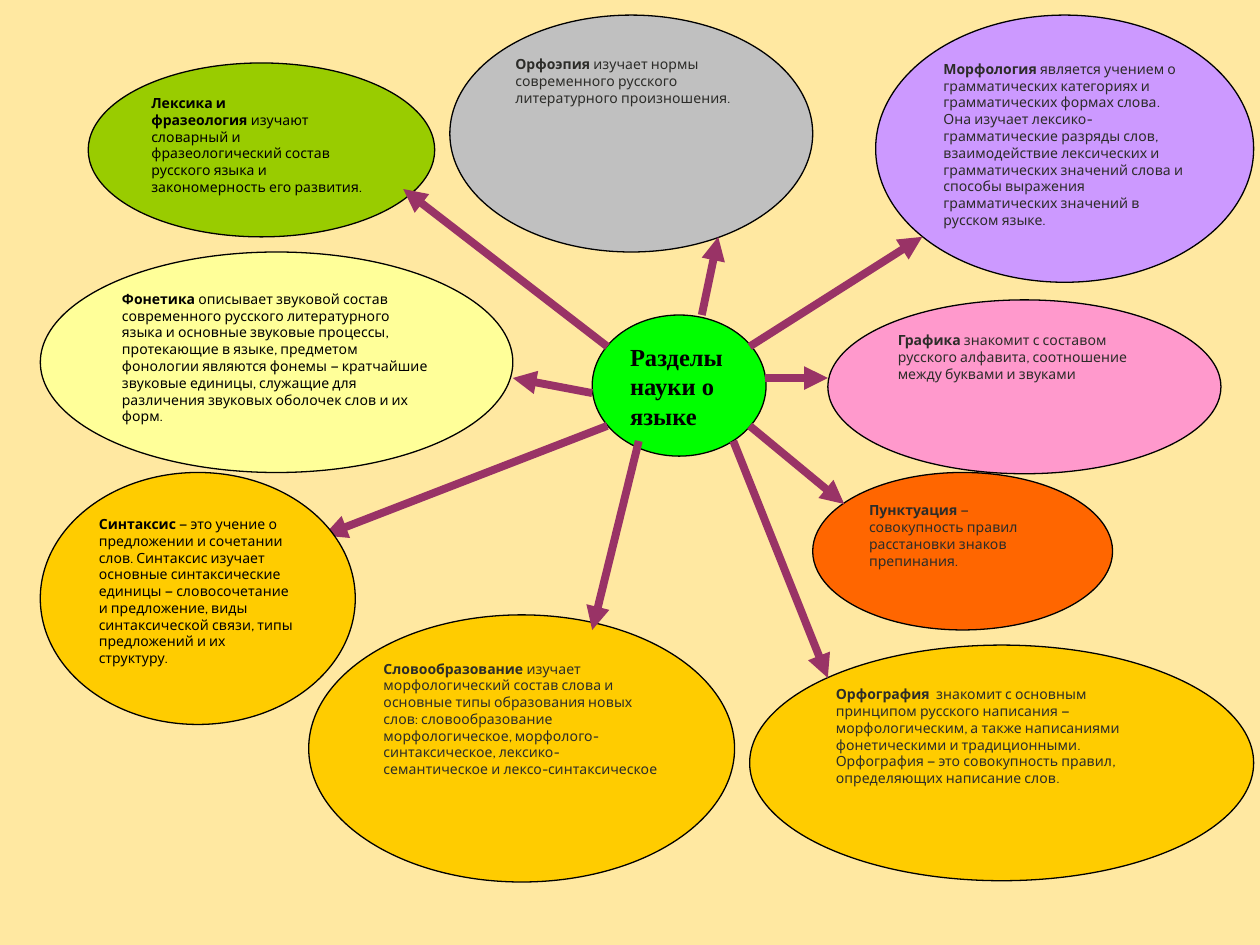
import pptx
import pptx.util
import pptx.dml.color
import pptx.enum.shapes
import pptx.enum.text
import pptx.oxml.ns
import lxml.etree

Inches = pptx.util.Inches
Pt = pptx.util.Pt
RGBColor = pptx.dml.color.RGBColor

BACKGROUND = RGBColor(0xFF, 0xE8, 0xA1)
BLACK = RGBColor(0x00, 0x00, 0x00)
DARK = RGBColor(0x2C, 0x2C, 0x29)
PLUM = RGBColor(0x99, 0x33, 0x66)
GREEN = RGBColor(0x00, 0xFF, 0x00)
OLIVE = RGBColor(0x99, 0xCC, 0x00)
YELLOW = RGBColor(0xFF, 0xFF, 0x99)
GREY = RGBColor(0xC0, 0xC0, 0xC0)
PINK = RGBColor(0xFF, 0x99, 0xCC)
GOLD = RGBColor(0xFF, 0xCC, 0x00)
LILAC = RGBColor(0xCC, 0x99, 0xFF)
ORANGE = RGBColor(0xFF, 0x66, 0x00)

NBSP = chr(160)

# Branches: left, top, width, height, fill, text colour, paragraph gap, term, description
BRANCHES = [
    (0.7, 0.5, 2.75, 1.38, OLIVE, BLACK, 5, "Лексика и фразеология",
     "изучают словарный и фразеологический состав русского языка "
     "и закономерность его развития."),
    (0.32, 2, 3.75, 1.75, YELLOW, BLACK, 5, "Фонетика",
     "описывает звуковой состав современного русского литературного языка "
     "и основные звуковые процессы, протекающие в языке, предметом фонологии "
     "являются фонемы — кратчайшие звуковые единицы, служащие для различения "
     "звуковых оболочек слов и их форм."),
    (3.57, 0.12, 2.88, 1.88, GREY, DARK, 5, "Орфоэпия",
     "изучает нормы современного русского литературного произношения."),
    (6.57, 2.38, 3.12, 1.38, PINK, DARK, 0, "Графика",
     "знакомит с составом русского алфавита, соотношение между буквами и звуками"),
    (5.95, 5.12, 4, 1.87, GOLD, DARK, 5, "Орфография",
     " знакомит с основным принципом русского написания — морфологическим, "
     "а также написаниями фонетическими и традиционными. Орфография — это "
     "совокупность правил, определяющих написание слов."),
    (2.45, 4.88, 3.38, 2.12, GOLD, DARK, 0, "Словообразование",
     "изучает морфологический состав слова и основные типы образования новых "
     "слов: словообразование морфологическое, морфолого-синтаксическое, "
     "лексико-семантическое и лексо-синтаксическое"),
    (6.95, 0.12, 3, 2.12, LILAC, DARK, 5, "Морфология",
     "является учением о грамматических категориях и грамматических формах "
     "слова. Она изучает лексико-грамматические разряды слов, взаимодействие "
     "лексических и грамматических значений слова и способы выражения "
     "грамматических значений в русском языке."),
    (6.45, 3.75, 2.38, 1.25, ORANGE, DARK, 5, "Пунктуация",
     "— совокупность правил расстановки знаков препинания."),
]

# This branch lies over its arrow
SYNTAX = (
    0.32, 3.75, 2.5, 2, GOLD, BLACK, 5, "Синтаксис",
    "— это учение о предложении и сочетании слов. Синтаксис изучает основные "
    "синтаксические единицы — словосочетание и предложение, виды "
    "синтаксической связи, типы предложений и их структуру.")

# Arrows: x and y of the start, x and y of the head
ARROWS = [
    (4.82, 2.75, 3.2, 1.5),
    (5.57, 2.5, 5.7, 1.88),
    (5.95, 2.75, 7.32, 1.88),
    (4.7, 3.12, 4.07, 3),
    (4.82, 3.38, 2.57, 4.25),
    (5.07, 3.5, 4.7, 5),
    (5.82, 3.5, 6.57, 5.38),
    (5.95, 3.38, 6.7, 4),
    (6.07, 3, 6.57, 3),
]


def add_run(p, text, font="Cabin", size=8, color=BLACK, bold=False):
    r = p.add_run()
    r.text = text
    r.font.name = font
    r.font.size = Pt(size)
    r.font.bold = bold
    r.font.color.rgb = color


def add_ellipse(s, left, top, width, height, fill):
    """Draw an outlined ellipse and return its paragraph."""
    sp = s.shapes.add_shape(
        pptx.enum.shapes.MSO_SHAPE.OVAL,
        Inches(left), Inches(top), Inches(width), Inches(height))
    sp.shadow.inherit = False
    sp.fill.solid()
    sp.fill.fore_color.rgb = fill
    sp.line.color.rgb = BLACK
    sp.line.width = Pt(0.75)
    tf = sp.text_frame
    tf.word_wrap = True
    tf.vertical_anchor = pptx.enum.text.MSO_ANCHOR.TOP
    p = tf.paragraphs[0]
    p.alignment = pptx.enum.text.PP_ALIGN.LEFT
    return p


def add_branch(s, left, top, width, height, fill, color, gap, term, description):
    p = add_ellipse(s, left, top, width, height, fill)
    p.space_before = p.space_after = Pt(gap)
    add_run(p, term, color=color, bold=True)
    # A dash stays on the line of the word before it
    add_run(p, NBSP + description.replace(" —", NBSP + "—"), color=color)


def add_arrow(s, x1, y1, x2, y2):
    c = s.shapes.add_connector(
        pptx.enum.shapes.MSO_CONNECTOR.STRAIGHT,
        Inches(x1), Inches(y1), Inches(x2), Inches(y2))
    c.line.color.rgb = PLUM
    c.line.width = Pt(4.5)
    qn = pptx.oxml.ns.qn
    ln = c.line._get_or_add_ln()
    lxml.etree.SubElement(ln, qn("a:tailEnd"), type="triangle")
    lxml.etree.SubElement(c._element.spPr, qn("a:effectLst"))


def main():
    prs = pptx.Presentation()
    prs.slide_width = Inches(10)
    prs.slide_height = Inches(7.5)
    s = prs.slides.add_slide(prs.slide_layouts[6])
    s.background.fill.solid()
    s.background.fill.fore_color.rgb = BACKGROUND

    # Centre of the map
    p = add_ellipse(s, 4.7, 2.5, 1.38, 1.12, GREEN)
    add_run(p, "Разделы науки о языке", font="Times New Roman", size=14, bold=True)

    # Branches and the arrows to them
    for branch in BRANCHES:
        add_branch(s, *branch)
    for arrow in ARROWS:
        add_arrow(s, *arrow)
    add_branch(s, *SYNTAX)

    prs.save("out.pptx")


if __name__ == "__main__":
    main()
